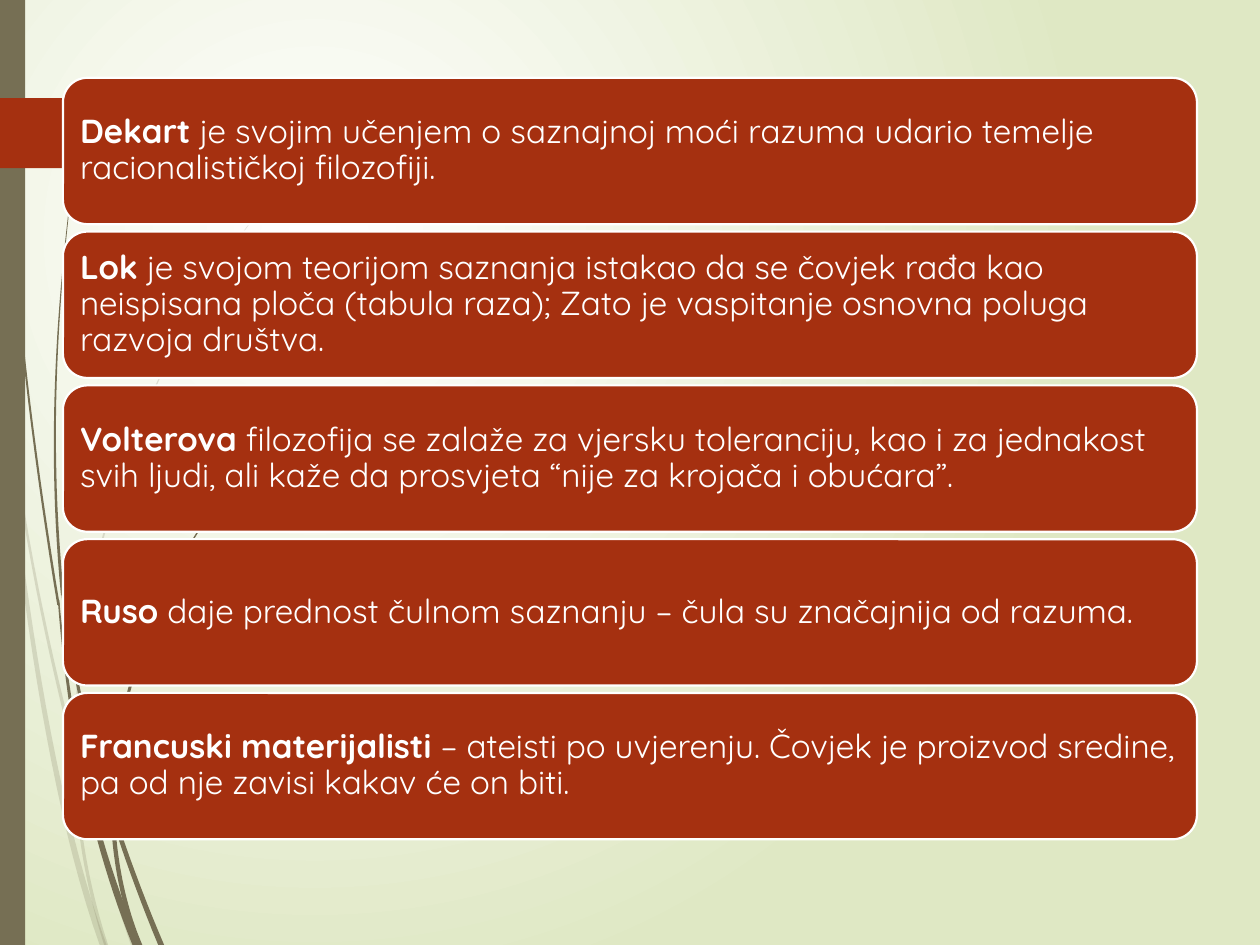
from typing import NamedTuple

from lxml.etree import SubElement
from pptx import Presentation
from pptx.dml.color import RGBColor
from pptx.enum.shapes import MSO_SHAPE
from pptx.enum.text import MSO_ANCHOR, PP_ALIGN
from pptx.oxml.ns import qn
from pptx.shapes.autoshape import Shape
from pptx.slide import Slide
from pptx.util import Cm, Pt

COLORS = {"white": "FFFFFF", "green": "DFE8C4", "olive": "766F54", "rust": "A53010"}
FONT = "Quicksand"
CURVE_STEPS = 24
CARD_TOP, CARD_PITCH = 1.57, 3.1


class Thinker(NamedTuple):
    """A bold name and the statement that follows it."""
    name: str
    statement: str


class Blade(NamedTuple):
    """A grass blade: Bezier points of its middle and its end widths, in centimetres."""
    spine: tuple[tuple[float, float], ...]
    tip_width: float
    root_width: float


THINKERS = [
    Thinker("Dekart", " je svojim učenjem o saznajnoj moći razuma udario temelje "
            "racionalističkoj filozofiji."),
    Thinker("Lok", " je svojom teorijom saznanja istakao da se čovjek rađa kao neispisana ploča "
            "(tabula raza); Zato je vaspitanje osnovna poluga razvoja društva."),
    Thinker("Volterova", " filozofija se zalaže za vjersku toleranciju, kao i za jednakost svih "
            "ljudi, ali kaže da prosvjeta “nije za krojača i obućara”."),
    Thinker("Ruso", " daje prednost čulnom saznanju – čula su značajnija od razuma."),
    Thinker("Francuski materijalisti", " – ateisti po uvjerenju. Čovjek je proizvod sredine, "
            "pa od nje zavisi kakav će on biti."),
]

PALE_BLADES = [
    Blade(((0, 7.3), (0.3, 10.7), (0.9, 15.8), (2.08, 19.05)), 0.04, 0.14),
    Blade(((0.25, 8.8), (0.8, 13), (1.9, 16.8), (2.69, 19.05)), 0.04, 0.1),
    Blade(((5.5, 3.9), (3.3, 6.6), (1.57, 10.7), (1.52, 15)), 0.01, 0.05),
    Blade(((1.52, 15), (1.5, 16.6), (1.8, 18), (2.14, 19.05)), 0.05, 0.08),
]

DARK_BLADES = [
    Blade(((0.06, 0), (0.08, 4.1), (0.5, 8.1), (1.18, 12.2)), 0.02, 0.05),
    Blade(((1.18, 12.1), (1.4, 14.7), (1.9, 17), (2.75, 19.05)), 0.03, 0.16),
    Blade(((1.47, 3.58), (1.12, 6.35), (0.97, 9.1), (1.26, 12)), 0.01, 0.06),
    Blade(((1.26, 12), (1.52, 14.2), (2.3, 16.8), (3.25, 19.05)), 0.04, 0.12),
    Blade(((5.47, 8.74), (3.8, 10.6), (2.36, 13.2), (2.27, 16.2)), 0.01, 0.08),
    Blade(((2.27, 16.2), (2.28, 17.3), (2.5, 18.3), (2.82, 19.05)), 0.08, 0.1),
]


def color(name: str) -> RGBColor:
    """Look up a palette colour."""
    return RGBColor.from_string(COLORS[name])


def paint(shape: Shape, fill: str) -> None:
    """Give a shape a plain fill with neither line nor shadow."""
    shape.shadow.inherit = False
    shape.fill.solid()
    shape.fill.fore_color.rgb = color(fill)
    shape.line.fill.background()


def draw_background(slide: Slide) -> None:
    """Fill the slide with a circular gradient."""
    fill = slide.background.fill
    fill.gradient()
    for stop, name, position in zip(fill.gradient_stops, ("white", "green"), (0, 1)):
        stop.color.rgb = color(name)
        stop.position = position
    gradient = slide.element.find(".//" + qn("a:gradFill"))
    linear = gradient.find(qn("a:lin"))
    circle = SubElement(gradient, qn("a:path"), path="circle")
    SubElement(circle, qn("a:fillToRect"), l="50000", t="50000", r="100000", b="100000")
    gradient.replace(linear, circle)


def outline(blade: Blade) -> list[tuple[int, int]]:
    """Follow the spine down one side of a blade and back up the other."""
    left, right = [], []
    for step in range(CURVE_STEPS + 1):
        t = step / CURVE_STEPS
        weights = ((1 - t) ** 3, 3 * t * (1 - t) ** 2, 3 * t * t * (1 - t), t ** 3)
        x, y = (sum(w * p[axis] for w, p in zip(weights, blade.spine)) for axis in (0, 1))
        half = (blade.tip_width + t * (blade.root_width - blade.tip_width)) / 2
        left.append((Cm(max(x - half, 0)), Cm(y)))
        right.append((Cm(x + half), Cm(y)))
    return left + right[::-1]


def draw_blade(slide: Slide, blade: Blade, opacity: int) -> None:
    """Draw one grass blade with an opacity in percent."""
    start, *rest = outline(blade)
    builder = slide.shapes.build_freeform(*start)
    builder.add_line_segments(rest, close=True)
    grass = builder.convert_to_shape()
    paint(grass, "olive")
    if opacity < 100:
        tint = grass.element.spPr.find(qn("a:solidFill")).find(qn("a:srgbClr"))
        SubElement(tint, qn("a:alpha"), val=str(opacity * 1000))


def draw_card(slide: Slide, thinker: Thinker, top: float) -> None:
    """Draw a rounded card with a thinker's name and statement."""
    card = slide.shapes.add_shape(MSO_SHAPE.ROUNDED_RECTANGLE, Cm(1.27), Cm(top),
                                  Cm(22.86), Cm(2.95))
    paint(card, "rust")
    card.line.color.rgb = color("white")
    card.line.width = Pt(1.25)
    frame = card.text_frame
    frame.word_wrap = True
    frame.vertical_anchor = MSO_ANCHOR.MIDDLE
    frame.margin_left = frame.margin_right = frame.margin_top = frame.margin_bottom = Cm(0.2)
    paragraph = frame.paragraphs[0]
    paragraph.alignment = PP_ALIGN.LEFT
    paragraph.line_spacing = 0.9
    for words, bold in ((thinker.name, True), (thinker.statement, False)):
        run = paragraph.add_run()
        run.text = words
        run.font.name, run.font.size, run.font.bold = FONT, Pt(19), bold
        run.font.color.rgb = color("white")


def main() -> None:
    """Build the slide and save it."""
    deck = Presentation()
    deck.slide_width, deck.slide_height = Cm(25.4), Cm(19.05)
    slide = deck.slides.add_slide(deck.slide_layouts[6])
    draw_background(slide)
    for blades, opacity in ((PALE_BLADES, 20), (DARK_BLADES, 100)):
        for blade in blades:
            draw_blade(slide, blade, opacity)
    side_bar = slide.shapes.add_shape(MSO_SHAPE.RECTANGLE, 0, 0, Cm(0.51), deck.slide_height)
    paint(side_bar, "olive")
    pointer = slide.shapes.add_shape(MSO_SHAPE.PENTAGON, 0, Cm(1.98), Cm(3.8), Cm(1.41))
    paint(pointer, "rust")
    for index, thinker in enumerate(THINKERS):
        draw_card(slide, thinker, CARD_TOP + index * CARD_PITCH)
    deck.save("out.pptx")


if __name__ == "__main__":
    main()
